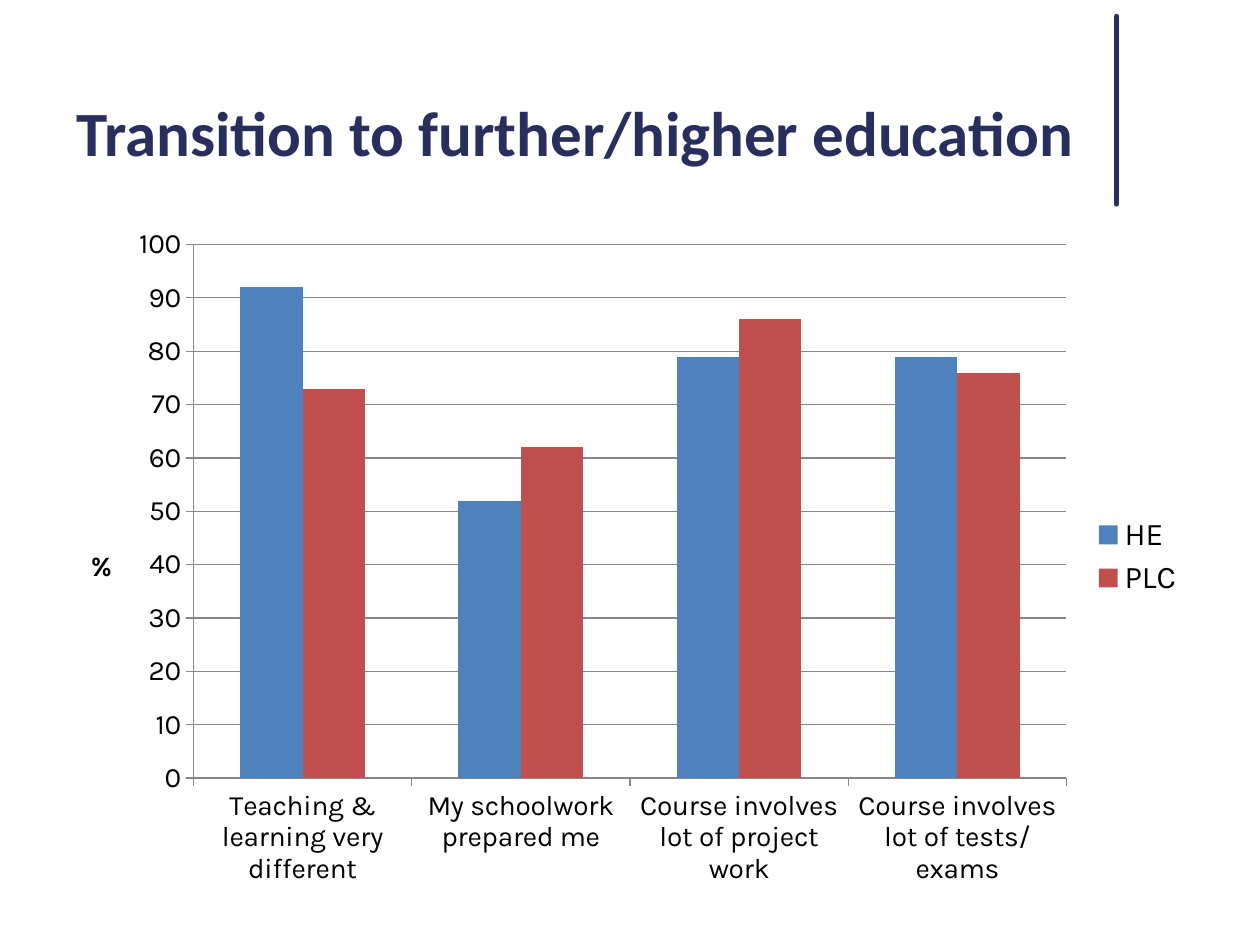
from dataclasses import dataclass

from lxml import etree
from pptx import Presentation
from pptx.chart.data import CategoryChartData
from pptx.dml.color import RGBColor
from pptx.enum import chart as ch, shapes, text
from pptx.oxml import ns
from pptx.util import Pt


@dataclass(frozen=True)
class Theme:
    navy: RGBColor = RGBColor(0x29, 0x2F, 0x5D)
    black: RGBColor = RGBColor(0, 0, 0)
    grid: RGBColor = RGBColor(0x86, 0x86, 0x86)
    series: tuple = (RGBColor(0x4F, 0x81, 0xBD), RGBColor(0xC0, 0x50, 0x4D))
    heading: str = "Calibri"
    body: str = "Karla"
    title_size: int = 36
    axis_size: int = 16
    legend_size: int = 18


THEME = Theme()
CATEGORIES = (
    "Teaching & learning very different",
    "My schoolwork prepared me",
    "Course involves lot of project work",
    "Course involves lot of tests/exams",
)
SERIES = {"HE": (92, 52, 79, 79), "PLC": (73, 62, 86, 76)}


def add_header(s, x, y, w, h):
    title = s.shapes.title
    title.left, title.top, title.width, title.height = Pt(x), Pt(y + 22.5), Pt(w - 7), Pt(68.5)
    tf = title.text_frame
    tf.text = "Transition to further/higher education"
    tf.word_wrap = True
    tf.auto_size = text.MSO_AUTO_SIZE.NONE
    tf.vertical_anchor = text.MSO_ANCHOR.BOTTOM
    p = tf.paragraphs[0]
    p.alignment = text.PP_ALIGN.LEFT
    p.font.name = THEME.heading
    p.font.size = Pt(THEME.title_size)
    p.font.bold = True
    p.font.color.rgb = THEME.navy

    rule = s.shapes.add_connector(
        shapes.MSO_CONNECTOR.STRAIGHT, Pt(x + w), Pt(y), Pt(x + w), Pt(y + h)
    )
    rule.line.color.rgb = THEME.navy
    rule.line.width = Pt(3.25)
    rule.line._get_or_add_ln().set("cap", "rnd")
    etree.SubElement(rule._element.spPr, ns.qn("a:effectLst"))


def set_layout(parent, index, **values):
    for old in parent.findall(ns.qn("c:layout")):
        parent.remove(old)
    layout = etree.Element(ns.qn("c:layout"))
    manual = etree.SubElement(layout, ns.qn("c:manualLayout"))
    for name, value in values.items():
        etree.SubElement(manual, ns.qn(f"c:{name}")).set("val", str(value))
    parent.insert(index, layout)


def style_axis(axis):
    axis.major_tick_mark = ch.XL_TICK_MARK.OUTSIDE
    axis.minor_tick_mark = ch.XL_TICK_MARK.NONE
    axis.format.line.color.rgb = THEME.grid
    axis.format.line.width = Pt(0.75)
    axis.tick_labels.font.size = Pt(THEME.axis_size)


def add_percent_title(axis):
    title = axis.axis_title
    tf = title.text_frame
    tf.text = "%"
    font = tf.paragraphs[0].font
    font.name = THEME.body
    font.size = Pt(THEME.axis_size)
    font.bold = True
    font.color.rgb = THEME.black
    body = title._element.find(".//" + ns.qn("a:bodyPr"))
    body.set("rot", "0")
    body.set("vert", "horz")
    set_layout(title._element, 1, xMode="edge", yMode="edge", x=0.02, y=0.48)


def add_bar_chart(s, x, y, w, h):
    data = CategoryChartData()
    data.categories = CATEGORIES
    for name, values in SERIES.items():
        data.add_series(name, values)
    chart = s.shapes.add_chart(
        ch.XL_CHART_TYPE.COLUMN_CLUSTERED, Pt(x), Pt(y), Pt(w), Pt(h), data
    ).chart
    chart.has_title = False
    chart.font.name = THEME.body
    chart.font.size = Pt(THEME.axis_size)
    chart.font.color.rgb = THEME.black

    plot = chart.plots[0]
    plot.vary_by_categories = False
    plot.gap_width = 150
    plot.overlap = 0
    for series, color in zip(plot.series, THEME.series):
        series.format.fill.solid()
        series.format.fill.fore_color.rgb = color

    style_axis(chart.category_axis)
    axis = chart.value_axis
    style_axis(axis)
    axis.minimum_scale, axis.maximum_scale, axis.major_unit = 0, 100, 10
    axis.has_major_gridlines = True
    axis.major_gridlines.format.line.color.rgb = THEME.grid
    axis.major_gridlines.format.line.width = Pt(0.75)
    add_percent_title(axis)

    chart.has_legend = True
    chart.legend.position = ch.XL_LEGEND_POSITION.RIGHT
    chart.legend.include_in_layout = False
    chart.legend.font.size = Pt(THEME.legend_size)

    area = chart._chartSpace.find(".//" + ns.qn("c:plotArea"))
    set_layout(area, 0, layoutTarget="inner", xMode="edge", yMode="edge",
               x=0.115, y=0.044, w=0.77, h=0.78)


def main():
    prs = Presentation()
    prs.slide_width, prs.slide_height = Pt(720), Pt(540)
    s = prs.slides.add_slide(prs.slide_layouts[5])
    add_header(s, 36.5, 9.5, 601.5, 107)
    add_bar_chart(s, 36, 122.5, 648, 391)
    prs.save("out.pptx")


if __name__ == "__main__":
    main()
